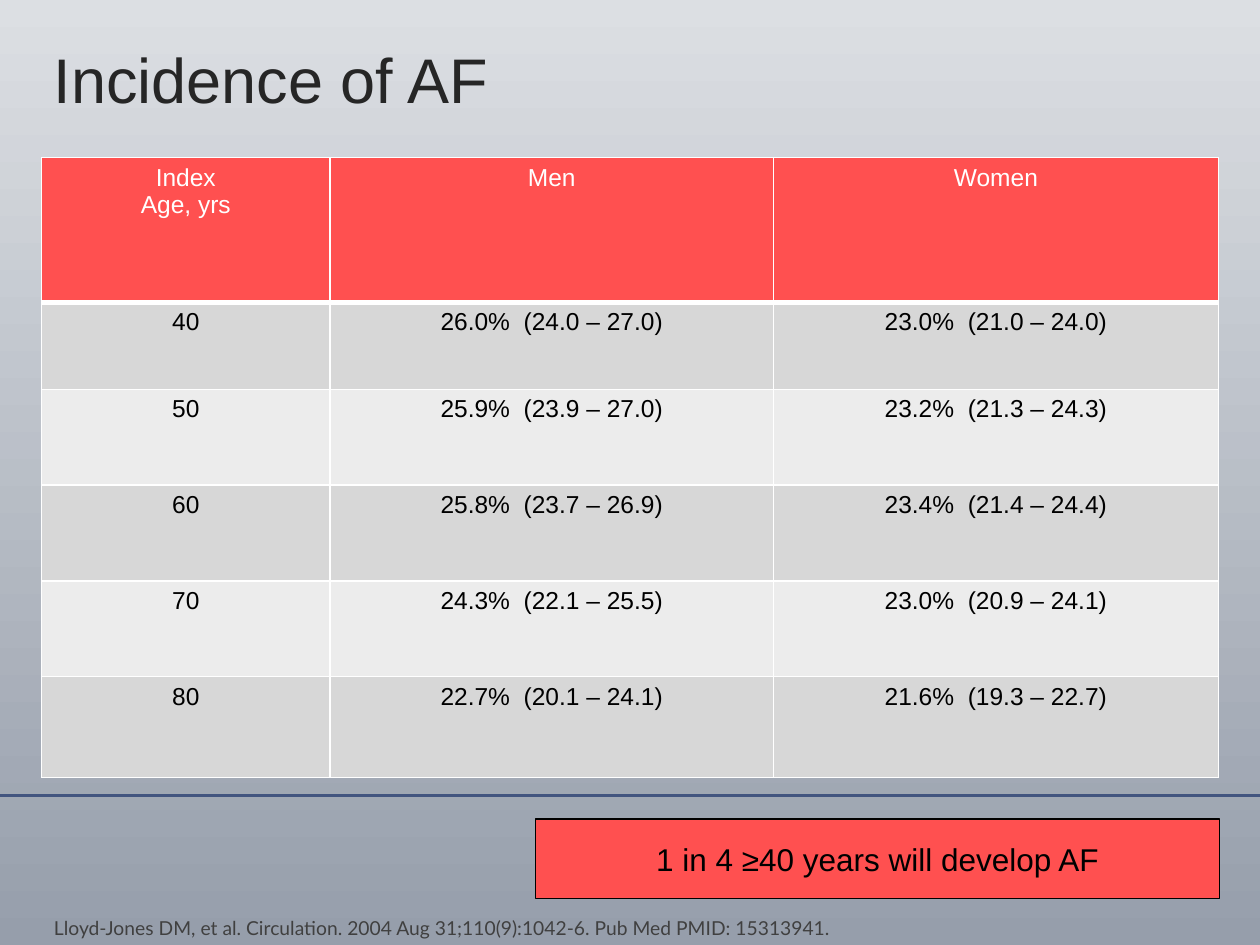
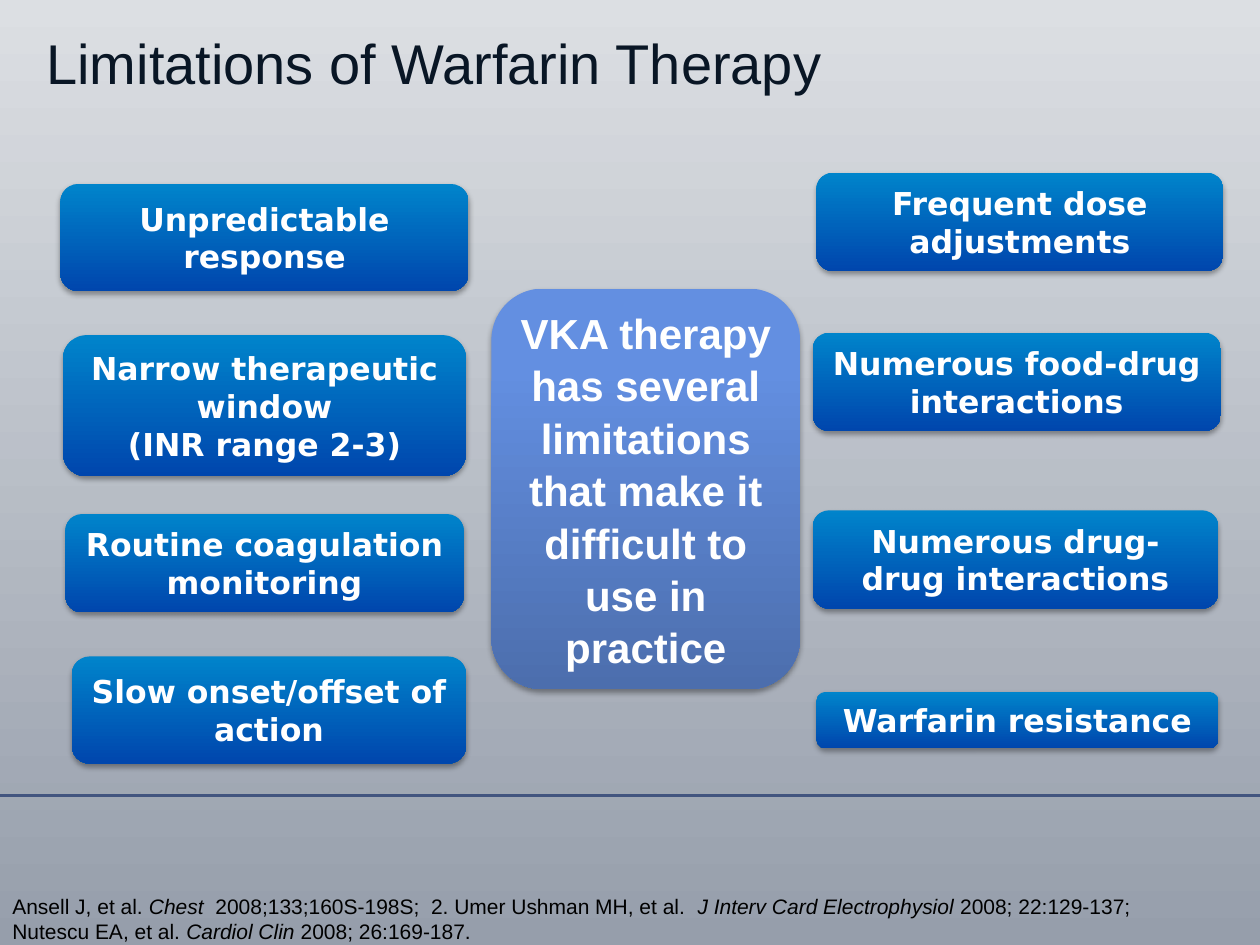
import pptx
import pptx.util
import pptx.dml.color
import pptx.enum.shapes
import pptx.enum.text
import pptx.oxml
import pptx.oxml.ns
from lxml import etree

# Grid: 100 columns by 75 rows
WIDE, HIGH = pptx.util.Inches(10), pptx.util.Inches(7.5)
COL, ROW = WIDE / 100, HIGH / 75

# Shared colours and faces
SKY = ("DCDFE3", "969EAB")
RULE, RED, WHITE, BLACK = "42557F", "FF5050", "FFFFFF", "000000"
BANDS = ("D7D7D7", "ECECEC")
BLUE = ("0084CB", "0046AD")
SOFT = ("638FE1", "4C6EAD")
SANS, BOLD, NOTE = "Arial", "DejaVu Sans", "Lato"

SHAPE = pptx.enum.shapes.MSO_SHAPE
ALIGN = pptx.enum.text.PP_ALIGN
ANCHOR = pptx.enum.text.MSO_ANCHOR


def rgb(code):
    return pptx.dml.color.RGBColor.from_string(code)


def place(left, top, wide, high):
    """Turn grid units into slide lengths."""
    return [round(n * unit) for n, unit in
            zip((left, top, wide, high), (COL, ROW, COL, ROW))]


def fade(fill, pair, start=0):
    """Blend from the first colour at the top to the second below."""
    fill.gradient()
    fill.gradient_angle = 270
    for stop, code, spot in zip(fill.gradient_stops, pair, (start, 1)):
        stop.color.rgb = rgb(code)
        stop.position = spot


def style(para, size, face, code, bold=False, align=None, space=None):
    para.alignment = align
    para.line_spacing = space
    font = para.font
    font.size, font.name, font.bold = pptx.util.Pt(size), face, bold
    font.color.rgb = rgb(code)


def label(slide, box, parts, size, face, code, anchor=ANCHOR.TOP, space=None):
    """Add a text box; every second part is italic."""
    frame = slide.shapes.add_textbox(*place(*box)).text_frame
    frame.word_wrap, frame.vertical_anchor = True, anchor
    para = frame.paragraphs[0]
    for i, part in enumerate(parts):
        run = para.add_run()
        run.text = part
        if i % 2:
            run.font.italic = True
    style(para, size, face, code, space=space)


def block(slide, kind, box, text, size, face, code, bold=False, space=None):
    """Add a shape with centred text."""
    shape = slide.shapes.add_shape(kind, *place(*box))
    shape.shadow.inherit = False
    frame = shape.text_frame
    frame.word_wrap, frame.vertical_anchor = True, ANCHOR.MIDDLE
    frame.text = text
    style(frame.paragraphs[0], size, face, code, bold, ALIGN.CENTER, space)
    return shape


def pill(slide, box, text, pair=BLUE, start=0, size=18, face=BOLD, space=None):
    """Add a rounded, shaded block with a soft shadow."""
    shape = block(slide, SHAPE.ROUNDED_RECTANGLE, box, text, size, face,
                  WHITE, True, space)
    fade(shape.fill, pair, start)
    shape.line.fill.background()
    glow = shape._element.spPr.find(pptx.oxml.ns.qn("a:effectLst"))
    glow.append(pptx.oxml.parse_xml(
        f'<a:outerShdw {pptx.oxml.ns.nsdecls("a")} blurRad="39370" '
        'dist="22860" dir="5400000" rotWithShape="0"><a:srgbClr '
        f'val="{BLACK}"><a:alpha val="35000"/></a:srgbClr></a:outerShdw>'))


def edge(cell, **sides):
    """Draw white cell borders, widths in points."""
    for side in "LRTB":
        wide = pptx.util.Pt(sides.get(side, 1))
        cell._tc.get_or_add_tcPr().append(pptx.oxml.parse_xml(
            f'<a:ln{side} {pptx.oxml.ns.nsdecls("a")} w="{wide}">'
            f'<a:solidFill><a:srgbClr val="{WHITE}"/></a:solidFill>'
            f'</a:ln{side}>'))


def grid(slide, box, cols, rows, data):
    """Add a table with a red head and grey bands."""
    table = slide.shapes.add_table(len(rows), len(cols), *place(*box)).table
    table.first_row = table.horz_banding = False
    for col, wide in zip(table.columns, cols):
        col.width = round(wide * COL)
    for r, (row, high) in enumerate(zip(data, rows)):
        table.rows[r].height = round(high * ROW)
        thick = {0: {"B": 3}, 1: {"T": 3}}.get(r, {})
        for c, text in enumerate(row):
            cell = table.cell(r, c)
            edge(cell, **thick)
            cell.fill.solid()
            cell.fill.fore_color.rgb = rgb(BANDS[(r - 1) % 2] if r else RED)
            cell.text = text
            for para in cell.text_frame.paragraphs:
                style(para, 14, SANS, BLACK if r else WHITE,
                      align=ALIGN.CENTER)


def page(deck):
    """Add a blank slide with the shared backdrop and rule."""
    slide = deck.slides.add_slide(deck.slide_layouts[6])
    fade(slide.background.fill, SKY)
    left, top, wide, _ = place(0, 63.1, 100, 0)
    rule = slide.shapes.add_connector(
        pptx.enum.shapes.MSO_CONNECTOR.STRAIGHT, left, top, wide, top)
    rule.line.color.rgb = rgb(RULE)
    rule.line.width = pptx.util.Pt(1.75)
    etree.SubElement(rule._element.spPr, pptx.oxml.ns.qn("a:effectLst"))
    return slide


def rates(deck):
    slide = page(deck)
    label(slide, (3.3, 3.3, 93.3, 5.8), ["Incidence of AF"], 36, SANS,
          "262626", ANCHOR.MIDDLE)
    grid(slide, (3.3, 12.5, 93.4, 49.2), (22.9, 35.2, 35.3),
         (11.5, 6.9, 7.6, 7.6, 7.6, 8), [
             ("Index\nAge, yrs", "Men", "Women"),
             ("40", "26.0%  (24.0 – 27.0)", "23.0%  (21.0 – 24.0)"),
             ("50", "25.9%  (23.9 – 27.0)", "23.2%  (21.3 – 24.3)"),
             ("60", "25.8%  (23.7 – 26.9)", "23.4%  (21.4 – 24.4)"),
             ("70", "24.3%  (22.1 – 25.5)", "23.0%  (20.9 – 24.1)"),
             ("80", "22.7%  (20.1 – 24.1)", "21.6%  (19.3 – 22.7)")])
    # Key message
    note = block(slide, SHAPE.RECTANGLE, (42.5, 65, 54.3, 6.3),
                 "1 in 4 ≥40 years will develop AF", 18, SANS, BLACK)
    note.fill.solid()
    note.fill.fore_color.rgb = rgb(RED)
    note.line.color.rgb = rgb(BLACK)
    note.line.width = pptx.util.Pt(0.75)
    label(slide, (3.3, 72.2, 76.6, 2.8),
          ["Lloyd-Jones DM, et al. Circulation. 2004 Aug 31;110(9):1042-6. "
           "Pub Med PMID: 15313941."], 11, NOTE, "404040")


def limits(deck):
    slide = page(deck)
    label(slide, (2.7, 2.5, 94.7, 5.7), ["Limitations of Warfarin Therapy"],
          32, SANS, "091625", ANCHOR.BOTTOM, 0.9)
    # Left stack, then right stack
    for box, text in [
            ((4.8, 14.6, 32.4, 8.5), "Unpredictable response"),
            ((5, 26.6, 32, 11.2),
             "Narrow therapeutic window\v(INR range 2-3)"),
            ((5.2, 40.8, 31.6, 7.8), "Routine coagulation monitoring"),
            ((5.7, 52.1, 31.3, 8.5), "Slow onset/offset of action"),
            ((64.8, 13.7, 32.3, 7.8), "Frequent dose adjustments"),
            ((64.5, 26.4, 32.4, 7.8), "Numerous food-drug interactions"),
            ((64.5, 40.5, 32.2, 7.8), "Numerous drug-drug interactions"),
            ((64.8, 54.9, 31.9, 4.5), "Warfarin resistance")]:
        pill(slide, box, text)
    # Centre message
    pill(slide, (39, 22.9, 24.5, 31.8),
         "VKA therapy has several limitations that make it difficult to use "
         "in practice", SOFT, 0.2, 24, SANS, 1.04)
    label(slide, (0, 70.4, 97.7, 5),
          ["Ansell J, et al. ", "Chest  ",
           "2008;133;160S-198S;  2. Umer Ushman MH, et al.  ",
           "J Interv Card Electrophysiol ",
           "2008; 22:129-137;  Nutescu EA, et al. ", "Cardiol Clin ",
           "2008; 26:169-187."], 12, SANS, BLACK)


def main():
    deck = pptx.Presentation()
    deck.slide_width, deck.slide_height = WIDE, HIGH
    rates(deck)
    limits(deck)
    deck.save("out.pptx")


if __name__ == "__main__":
    main()
